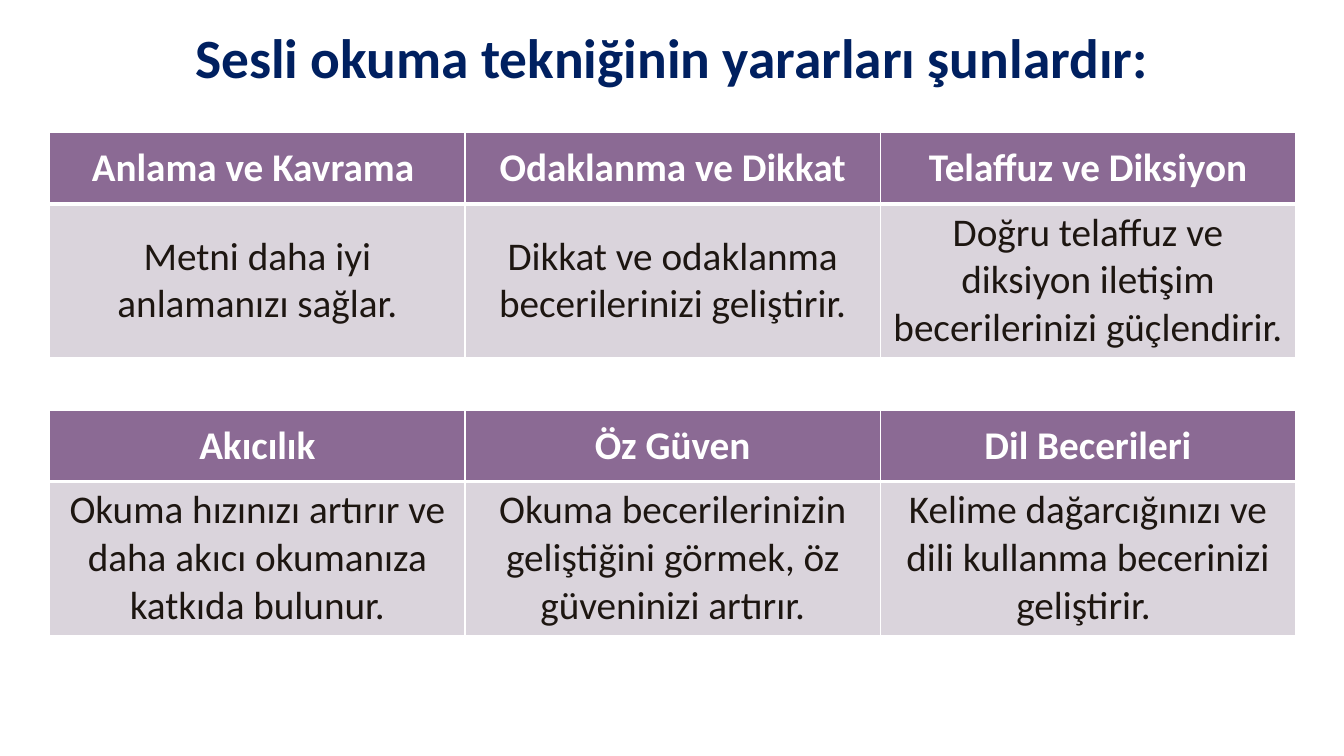
from lxml.etree import SubElement
from pptx import Presentation
from pptx.dml.color import RGBColor
from pptx.enum.text import MSO_ANCHOR, MSO_AUTO_SIZE, PP_ALIGN
from pptx.oxml.ns import qn
from pptx.util import Pt

COLORS = {
    "background": "FFFFFF",
    "title": "002060",
    "header": "8B6A94",
    "header text": "FFFFFF",
    "body": "DAD4DC",
    "body text": "1D1611",
    "border": "FFFFFF",
}
FONT = "Calibri"
HEADER_HEIGHT = 51
TABLE_LEFT, TABLE_WIDTH, TABLE_HEIGHT = 35.5, 890, 159.5
BENEFIT_TABLES = [
    (94.5, {
        "Anlama ve Kavrama ": "Metni daha iyi anlamanızı sağlar.",
        "Odaklanma ve Dikkat": "Dikkat ve odaklanma becerilerinizi geliştirir.",
        "Telaffuz ve Diksiyon":
            "Doğru telaffuz ve diksiyon iletişim becerilerinizi güçlendirir.",
    }),
    (293, {
        "Akıcılık": "Okuma hızınızı artırır ve daha akıcı okumanıza katkıda bulunur.",
        "Öz Güven": "Okuma becerilerinizin geliştiğini görmek, öz güveninizi artırır.",
        "Dil Becerileri":
            "Kelime dağarcığınızı ve dili kullanma becerinizi geliştirir. ",
    }),
]


def color(name):
    return RGBColor.from_string(COLORS[name])


def format_paragraph(paragraph, size, color_name, bold):
    paragraph.alignment = PP_ALIGN.CENTER
    for run in paragraph.runs:
        run.font.name = FONT
        run.font.size = Pt(size)
        run.font.bold = bold
        run.font.color.rgb = color(color_name)


def add_borders(cell, bottom_width):
    """Draw the cell borders; call before the fill, which must follow them in the XML."""
    properties = cell._tc.get_or_add_tcPr()
    for side, width in (("L", 1), ("R", 1), ("T", 1), ("B", bottom_width)):
        line = SubElement(properties, qn(f"a:ln{side}"), w=str(Pt(width)))
        fill = SubElement(line, qn("a:solidFill"))
        SubElement(fill, qn("a:srgbClr"), val=COLORS["border"])


def add_title(slide, left, top, width, height):
    title = slide.shapes.title
    title.left, title.top, title.width, title.height = map(Pt, (left, top, width, height))
    frame = title.text_frame
    frame.text = "Sesli okuma tekniğinin yararları şunlardır:"
    frame.word_wrap = True
    frame.auto_size = MSO_AUTO_SIZE.NONE
    frame.vertical_anchor = MSO_ANCHOR.BOTTOM
    frame.margin_left = frame.margin_right = Pt(9.36)
    frame.margin_top = frame.margin_bottom = Pt(5.04)
    frame.paragraphs[0].line_spacing = 0.85
    format_paragraph(frame.paragraphs[0], 39.6, "title", True)


def add_benefit_table(slide, benefits, left, top, width, height):
    shape = slide.shapes.add_table(
        2, len(benefits), Pt(left), Pt(top), Pt(width), Pt(height))
    table = shape.table
    table.horz_banding = False
    for column in table.columns:
        column.width = Pt(width / len(benefits))
    table.rows[0].height = Pt(HEADER_HEIGHT)
    table.rows[1].height = Pt(height - HEADER_HEIGHT)
    for column_index, texts in enumerate(benefits.items()):
        for row_index, (text, role) in enumerate(zip(texts, ("header", "body"))):
            cell = table.cell(row_index, column_index)
            is_header = role == "header"
            add_borders(cell, 3 if is_header else 1)
            cell.fill.solid()
            cell.fill.fore_color.rgb = color(role)
            cell.vertical_anchor = MSO_ANCHOR.MIDDLE
            paragraph = cell.text_frame.paragraphs[0]
            paragraph.text = text
            format_paragraph(paragraph, 28, f"{role} text", is_header)


def main():
    presentation = Presentation()
    presentation.slide_width, presentation.slide_height = Pt(960), Pt(540)
    slide = presentation.slides.add_slide(presentation.slide_layouts[5])
    slide.background.fill.solid()
    slide.background.fill.fore_color.rgb = color("background")
    add_title(slide, 52, 22.5, 856, 46.5)
    for top, benefits in BENEFIT_TABLES:
        add_benefit_table(slide, benefits, TABLE_LEFT, top, TABLE_WIDTH, TABLE_HEIGHT)
    presentation.save("out.pptx")


if __name__ == "__main__":
    main()
